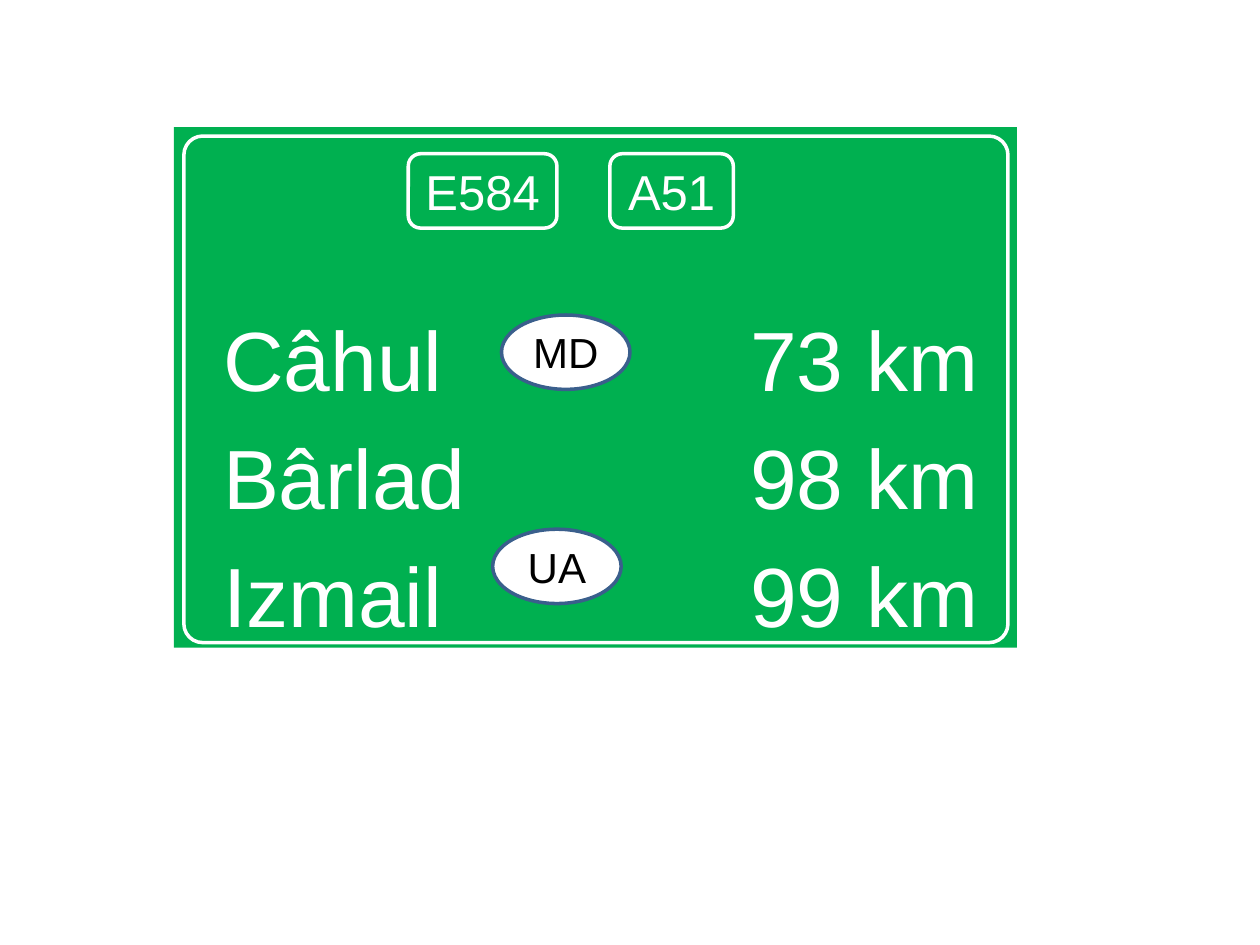
from pptx import Presentation
from pptx.dml.color import RGBColor
from pptx.enum.shapes import MSO_SHAPE
from pptx.enum.text import MSO_ANCHOR, PP_ALIGN
from pptx.util import Inches, Pt
from lxml.etree import SubElement
from pptx.oxml.ns import qn

GREEN, WHITE, BLACK, BLUE = "00B050", "FFFFFF", "000000", "3A5F8C"
DISTANCES = [("Câhul", "73 km"), ("Bârlad", "98 km"), ("Izmail", "99 km")]
ROADS = [("A51", 4.84, 0.98), ("E584", 3.24, 1.18)]
COUNTRIES = [("UA", 3.91, 4.2), ("MD", 3.98, 2.5)]
ROAD_TOP, COUNTRY_WIDTH, BADGE_HEIGHT = 1.22, 1.02, 0.59
KM_RIGHT_EDGE = 6


def color(value):
    return RGBColor.from_string(value)


def add_box(page, kind, left, top, width, height, fill=None, line=None):
    box = page.shapes.add_shape(kind, *map(Inches, (left, top, width, height)))
    box.shadow.inherit = False
    if fill:
        box.fill.solid()
        box.fill.fore_color.rgb = color(fill)
    else:
        box.fill.background()
    if line:
        box.line.color.rgb = color(line)
        box.line.width = Pt(2)
    else:
        box.line.fill.background()
    return box


def write(para, text, size, ink):
    span = para.add_run()
    span.text = text
    span.font.color.rgb = color(ink)
    for name, value in {"name": "Arial", "size": Pt(size)}.items():
        setattr(span.font, name, value)


def add_badge(page, kind, text, place, fill, line, size, ink):
    box = add_box(page, kind, *place, fill, line)
    box.text_frame.vertical_anchor = MSO_ANCHOR.MIDDLE
    para = box.text_frame.paragraphs[0]
    para.alignment = PP_ALIGN.CENTER
    write(para, text, size, ink)


def add_distances(board):
    frame = board.text_frame
    settings = {"margin_left": Inches(0.39), "margin_top": Inches(1.43),
                "margin_right": Inches(0.08), "margin_bottom": 0,
                "vertical_anchor": MSO_ANCHOR.TOP, "word_wrap": True}
    for name, value in settings.items():
        setattr(frame, name, value)
    for index, (town, distance) in enumerate(DISTANCES):
        para = frame.add_paragraph() if index else frame.paragraphs[0]
        para.alignment = PP_ALIGN.LEFT
        if index:
            para.space_before = Pt(9.9)
        tabs = SubElement(para._p.get_or_add_pPr(), qn("a:tabLst"))
        SubElement(tabs, qn("a:tab"), pos=str(Inches(KM_RIGHT_EDGE)), algn="r")
        write(para, f"{town}\t{distance}", 48, WHITE)


def main():
    deck = Presentation()
    deck.slide_width, deck.slide_height = Inches(10), Inches(7.5)
    page = deck.slides.add_slide(deck.slide_layouts[6])

    board = add_box(page, MSO_SHAPE.RECTANGLE, 1.38, 1.01, 6.69, 4.13, GREEN)
    add_distances(board)
    border = add_box(page, MSO_SHAPE.ROUNDED_RECTANGLE,
                     1.46, 1.08, 6.54, 4.02, line=WHITE)
    border.adjustments[0] = 0.037

    for road, left, width in ROADS:
        add_badge(page, MSO_SHAPE.ROUNDED_RECTANGLE, road,
                  (left, ROAD_TOP, width, BADGE_HEIGHT), GREEN, WHITE, 28, WHITE)
    for country, left, top in COUNTRIES:
        add_badge(page, MSO_SHAPE.OVAL, country,
                  (left, top, COUNTRY_WIDTH, BADGE_HEIGHT), WHITE, BLUE, 24, BLACK)

    deck.save("out.pptx")


if __name__ == "__main__":
    main()
